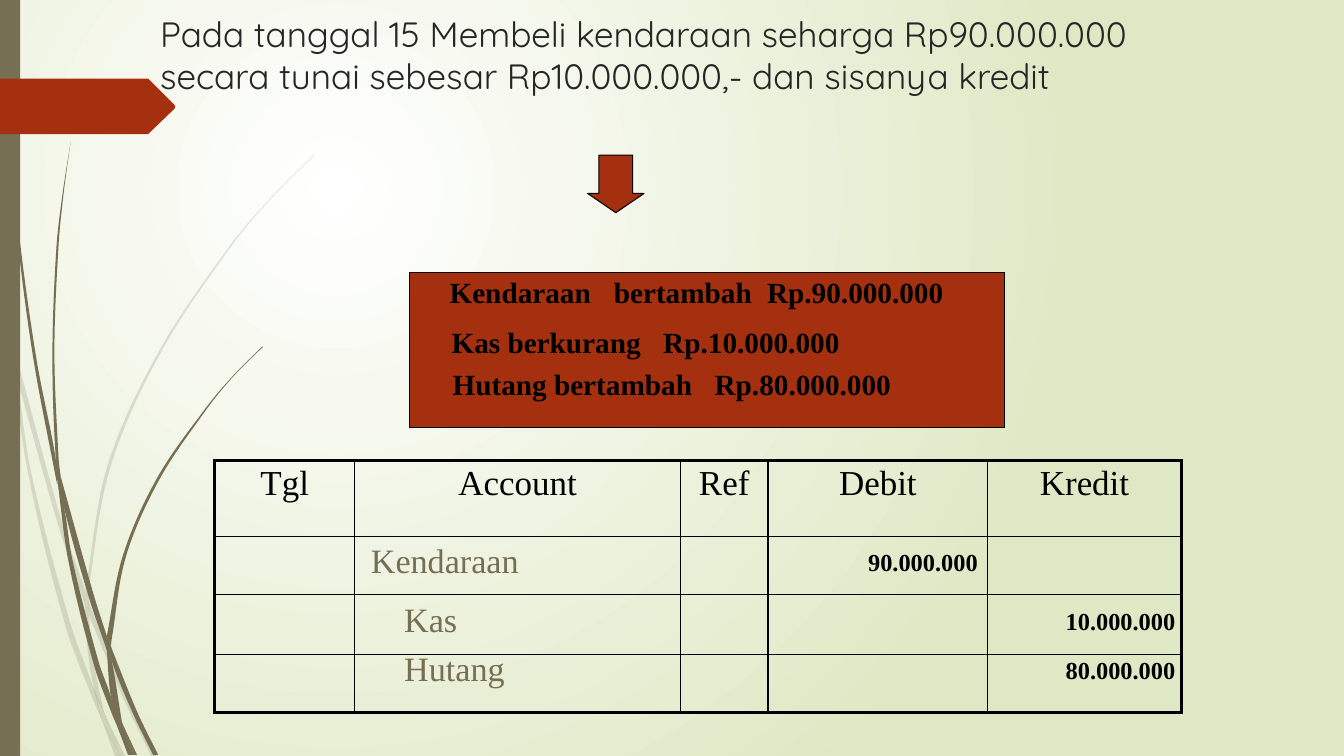
import dataclasses

import lxml.etree
import pptx
import pptx.dml.color
import pptx.enum.shapes
import pptx.enum.text
import pptx.oxml.ns
import pptx.util

SHAPE = pptx.enum.shapes.MSO_SHAPE
ALIGN = pptx.enum.text.PP_ALIGN
ANCHOR = pptx.enum.text.MSO_ANCHOR
qn = pptx.oxml.ns.qn


@dataclasses.dataclass(frozen=True)
class Theme:
    white: str = "FFFFFF"
    pale: str = "DFE8C4"
    olive: str = "766F54"
    rust: str = "A53010"
    ink: str = "262626"
    black: str = "000000"
    serif: str = "Times New Roman"
    sans: str = "Quicksand"
    title: float = 25.1
    heading: float = 25
    account: float = 24.4
    effect: float = 20.9
    amount: float = 17.4
    outline: float = 0.75
    thin: float = 1
    thick: float = 2.25


class Painter:
    """Draws styled elements on the current slide, in px of a hundredth of an inch."""

    scale = 9144

    def __init__(self, page, theme):
        self.page = page
        self.theme = theme

    def emu(self, length):
        return pptx.util.Emu(round(length * self.scale))

    def box_of(self, bounds):
        return [self.emu(length) for length in bounds]

    def color(self, name):
        return pptx.dml.color.RGBColor.from_string(name)

    def background(self, inner, outer):
        fill = self.page.background.fill
        fill.gradient()
        for stop, name in zip(fill.gradient_stops, (inner, outer)):
            stop.color.rgb = self.color(name)
        gradient = self.page.element.find(".//" + qn("a:gradFill"))
        gradient.remove(gradient.find(qn("a:lin")))
        circle = lxml.etree.SubElement(gradient, qn("a:path"), {"path": "circle"})
        lxml.etree.SubElement(circle, qn("a:fillToRect"), l="50000", t="50000", r="100000", b="100000")

    def paint(self, shape, fill, line=None, alpha=None):
        shape.shadow.inherit = False
        shape.fill.solid()
        shape.fill.fore_color.rgb = self.color(fill)
        if alpha:
            tint = shape.element.find(".//" + qn("a:srgbClr"))
            lxml.etree.SubElement(tint, qn("a:alpha"), val=str(alpha * 1000))
        if line:
            shape.line.color.rgb = self.color(line)
            shape.line.width = pptx.util.Pt(self.theme.outline)
        else:
            shape.line.fill.background()

    def shape(self, kind, bounds, fill, line=None, adjust=()):
        shape = self.page.shapes.add_shape(kind, *self.box_of(bounds))
        for index, value in enumerate(adjust):
            shape.adjustments[index] = value
        self.paint(shape, fill, line)

    def curved(self, edges, fill, alpha=None):
        points = [(self.emu(dot.real), self.emu(dot.imag)) for dot in bezier_points(edges)]
        builder = self.page.shapes.build_freeform(*points[0], scale=1)
        builder.add_line_segments(points[1:], close=True)
        shape = builder.convert_to_shape()
        lines = shape.element.findall(".//" + qn("a:lnTo"))
        for first, second, third in zip(lines[::3], lines[1::3], lines[2::3]):
            curve = lxml.etree.Element(qn("a:cubicBezTo"))
            first.addprevious(curve)
            for line in (first, second, third):
                curve.append(line[0])
                line.getparent().remove(line)
        self.paint(shape, fill, alpha=alpha)

    def style(self, para, size, font, color, bold=False, align=ALIGN.LEFT):
        para.alignment = align
        for span in para.runs:
            span.font.size = pptx.util.Pt(size)
            span.font.name = font
            span.font.bold = bold
            span.font.color.rgb = self.color(color)

    def text(self, words, bounds, size, font, color, bold=False, align=ALIGN.LEFT,
             anchor=ANCHOR.TOP, wrap=True, insets=(9, 4), tabs=()):
        frame = self.page.shapes.add_textbox(*self.box_of(bounds)).text_frame
        frame.word_wrap = wrap
        frame.vertical_anchor = anchor
        frame.margin_left = frame.margin_right = self.emu(insets[0])
        frame.margin_top = frame.margin_bottom = self.emu(insets[1])
        frame.text = words
        para = frame.paragraphs[0]
        self.style(para, size, font, color, bold, align)
        if tabs:
            stops = lxml.etree.SubElement(para._p.get_or_add_pPr(), qn("a:tabLst"))
            for position in tabs:
                lxml.etree.SubElement(stops, qn("a:tab"), pos=str(self.emu(position)), algn="l")

    def border(self, cell, widths):
        properties = cell._tc.get_or_add_tcPr()
        for index, (side, width) in enumerate(widths.items()):
            line = lxml.etree.Element(qn("a:ln" + side), w=str(pptx.util.Pt(width)))
            fill = lxml.etree.SubElement(line, qn("a:solidFill"))
            lxml.etree.SubElement(fill, qn("a:srgbClr"), val=self.theme.black)
            properties.insert(index, line)

    def journal(self, headings, left, top, widths, heights):
        theme = self.theme
        bounds = self.box_of((left, top, sum(widths), sum(heights)))
        table = self.page.shapes.add_table(len(heights), len(widths), *bounds).table
        table.first_row = table.horz_banding = False
        for column, width in zip(table.columns, widths):
            column.width = self.emu(width)
        last_row, last_column = len(heights) - 1, len(widths) - 1
        for y, row in enumerate(table.rows):
            row.height = self.emu(heights[y])
            for x, cell in enumerate(row.cells):
                cell.fill.background()
                cell.margin_top = cell.margin_bottom = self.emu(4)
                outer = {"L": x == 0, "R": x == last_column, "T": y == 0, "B": y == last_row}
                self.border(cell, {side: theme.thick if edge else theme.thin for side, edge in outer.items()})
                if y == 0:
                    cell.text_frame.text = headings[x]
                    self.style(cell.text_frame.paragraphs[0], theme.heading, theme.serif,
                               theme.black, align=ALIGN.CENTER)


def bezier_points(edges):
    edges = [[complex(*dot) for dot in edge] for edge in edges]
    points = [edges[0][0]]
    for edge in edges:
        if edge[0] != points[-1]:
            step = (edge[0] - points[-1]) / 3
            points += [points[-1] + step, edge[0] - step, edge[0]]
        padded = [edge[0], *edge, edge[-1]]
        for before, start, end, after in zip(padded, padded[1:], padded[2:], padded[3:]):
            reach = abs(end - start) / 3
            leave, arrive = end - before, after - start
            points += [start + leave / abs(leave) * reach, end - arrive / abs(arrive) * reach, end]
    return points


PALE_BLADES = [
    [[(11, 350), (9, 322), (0, 282)], [(0, 299), (10, 344), (11, 350)]],
    [[(14, 345), (62, 520), (85, 586)], [(84, 599), (58, 522), (17, 376)]],
    [[(88, 596), (92, 607), (127, 692), (155, 750)], [(150, 750), (123, 694), (88, 610)]],
    [[(105, 711), (124, 750)], [(119, 750), (105, 711)]],
    [[(11, 350), (17, 376), (31, 469), (70, 619), (93, 683), (101, 714)],
     [(101, 714), (92, 693), (65, 621), (28, 470), (11, 350)]],
    [[(84, 599), (88, 610), (91, 646), (103, 706), (105, 711)], [(96, 692), (93, 683), (87, 646), (84, 599)]],
    [[(312, 153), (268, 197), (228, 244), (158, 348), (107, 461), (85, 584)],
     [(88, 596), (88, 584), (110, 462), (160, 349), (229, 245), (268, 198), (312, 154)]],
    [[(101, 714), (119, 750)], [(114, 750), (101, 714)]],
    [[(85, 586), (88, 596), (88, 610)], [(88, 608), (84, 599), (85, 586)]],
    [[(93, 683), (105, 711), (119, 750)], [(119, 750), (101, 714), (99, 707), (93, 683)]],
]
DARK_BLADES = [
    [[(4, 0), (5, 48), (8, 109), (19, 232), (36, 355), (55, 453), (57, 481)],
     [(56, 477), (33, 355), (17, 233), (7, 110), (4, 48), (3, 0)]],
    [[(60, 472), (93, 590), (106, 631)], [(106, 645), (88, 592), (64, 505), (60, 472)]],
    [[(110, 641), (113, 649), (136, 706), (157, 749)], [(152, 749), (132, 708), (111, 656), (110, 641)]],
    [[(57, 477), (64, 505), (72, 556), (98, 657), (110, 691), (117, 722)],
     [(117, 722), (111, 708), (93, 659), (68, 557), (57, 477)]],
    [[(70, 141), (63, 193), (58, 245), (54, 349), (58, 453), (60, 472)],
     [(60, 472), (55, 449), (52, 349), (56, 245), (62, 193), (70, 141)]],
    [[(122, 719), (136, 749)], [(133, 749), (122, 719)]],
    [[(55, 449), (60, 472), (64, 505)], [(64, 505), (57, 477), (55, 449)]],
    [[(260, 344), (231, 373), (204, 405), (156, 474), (122, 551), (106, 631)],
     [(110, 641), (111, 633), (125, 552), (158, 476), (205, 406), (231, 374), (261, 344)]],
    [[(117, 722), (131, 749)], [(127, 749), (117, 722)]],
    [[(106, 645), (111, 656), (121, 716), (122, 719)], [(116, 706), (110, 691), (106, 645)]],
    [[(106, 631), (110, 641), (111, 656)], [(106, 645), (106, 631)]],
    [[(110, 691), (122, 719), (133, 749)], [(130, 749), (117, 722), (110, 691)]],
]
TAG = [[(0, 78), (147, 78)], [(173, 104), (174, 106), (173, 108)], [(147, 133), (0, 133)]]
EFFECTS = [
    ("Kendaraan\tbertambah\tRp.90.000.000", (437, 268, 512, 44), (163, 315)),
    ("Kas berkurang\tRp.10.000.000", (439, 318, 407, 44), (210,)),
    ("Hutang bertambah\tRp.80.000.000", (440, 359, 458, 44), (260,)),
]
ENTRIES = [
    ("Kendaraan", (359, 545, 246, 21), "90.000.000", (851, 539, 128, 38)),
    ("Kas", (392, 600, 288, 28), "10.000.000", (1047, 597, 128, 38)),
    ("Hutang", (392, 649, 288, 28), "80.000.000", (1047, 646, 128, 38)),
]


def main():
    theme = Theme()
    deck = pptx.Presentation()
    deck.slide_width, deck.slide_height = pptx.util.Emu(12192000), pptx.util.Emu(6858000)
    painter = Painter(deck.slides.add_slide(deck.slide_layouts[6]), theme)
    painter.background(theme.white, theme.pale)
    for blades, alpha in ((PALE_BLADES, 20), (DARK_BLADES, None)):
        for edges in blades:
            painter.curved(edges, theme.olive, alpha)
    painter.shape(SHAPE.RECTANGLE, (0, 0, 20, 750), theme.olive)
    painter.curved(TAG, theme.rust)
    painter.text("Pada tanggal 15 Membeli kendaraan seharga Rp90.000.000 secara tunai sebesar "
                 "Rp10.000.000,- dan sisanya kredit", (149, 7, 1046, 100),
                 theme.title, theme.sans, theme.ink, insets=(10, 5))
    painter.shape(SHAPE.DOWN_ARROW, (583, 154, 56, 57), theme.rust, theme.black, (0.6, 0.34))
    painter.shape(SHAPE.RECTANGLE, (406, 270, 591, 154), theme.rust, theme.black)
    painter.journal(("Tgl", "Account", "Ref", "Debit", "Kredit"), 213, 457,
                    (139, 323, 87, 218, 192), (75, 58, 59, 58))
    for words, bounds, tabs in EFFECTS:
        painter.text(words, bounds, theme.effect, theme.serif, theme.black, bold=True, tabs=tabs)
    for account, account_bounds, amount, amount_bounds in ENTRIES:
        painter.text(account, account_bounds, theme.account, theme.serif, theme.olive, anchor=ANCHOR.MIDDLE)
        painter.text(amount, amount_bounds, theme.amount, theme.serif, theme.black,
                     bold=True, align=ALIGN.RIGHT, wrap=False)
    deck.save("out.pptx")


if __name__ == "__main__":
    main()
